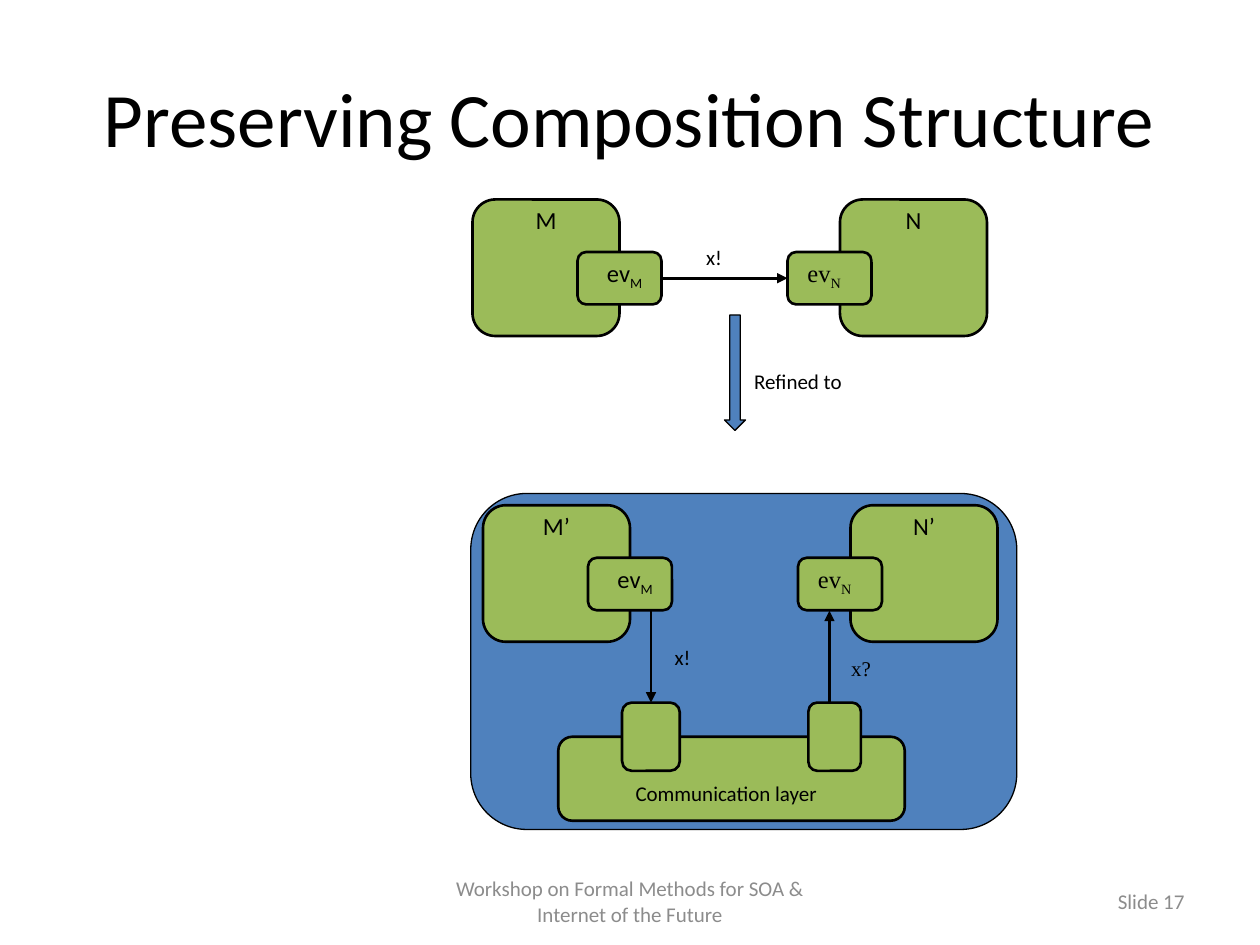
from lxml import etree
from pptx import Presentation
from pptx.dml.color import RGBColor
from pptx.enum.shapes import MSO_CONNECTOR, MSO_SHAPE
from pptx.enum.text import MSO_ANCHOR, PP_ALIGN
from pptx.oxml.ns import qn
from pptx.util import Pt

BLACK = RGBColor(0x00, 0x00, 0x00)
GREY = RGBColor(0x8C, 0x8C, 0x8C)
GREEN = RGBColor(0x9B, 0xBB, 0x59)
BLUE = RGBColor(0x4F, 0x81, 0xBD)
SANS = "Calibri"
SERIF = "Times New Roman"
ROUND = MSO_SHAPE.ROUNDED_RECTANGLE
DOWN_ARROW = MSO_SHAPE.DOWN_ARROW
STRAIGHT = MSO_CONNECTOR.STRAIGHT
TOP, MIDDLE = MSO_ANCHOR.TOP, MSO_ANCHOR.MIDDLE
CENTER, RIGHT = PP_ALIGN.CENTER, PP_ALIGN.RIGHT


def add_text(shapes, x, y, w, h, text, size=12, font=SANS, color=BLACK,
             align=CENTER, anchor=TOP, inset=(3, 1.5), subscript=None):
    tf = shapes.add_textbox(Pt(x), Pt(y), Pt(w), Pt(h)).text_frame
    tf.word_wrap = True
    tf.vertical_anchor = anchor
    tf.margin_left = tf.margin_right = Pt(inset[0])
    tf.margin_top = tf.margin_bottom = Pt(inset[1])
    p = tf.paragraphs[0]
    p.alignment = align
    p.font.size = Pt(size)
    p.font.name = font
    p.font.color.rgb = color
    p.add_run().text = text
    if subscript:
        r = p.add_run()
        r.text = subscript
        r.font._element.set("baseline", "-25000")


def add_block(shapes, x, y, w, h, fill=GREEN, weight=1.5, kind=ROUND):
    sp = shapes.add_shape(kind, Pt(x), Pt(y), Pt(w), Pt(h))
    sp.shadow.inherit = False
    sp.fill.solid()
    sp.fill.fore_color.rgb = fill
    sp.line.color.rgb = BLACK
    sp.line.width = Pt(weight)
    return sp


def add_arrow(shapes, x1, y1, x2, y2):
    cxn = shapes.add_connector(STRAIGHT, Pt(x1), Pt(y1), Pt(x2), Pt(y2))
    cxn.line.color.rgb = BLACK
    cxn.line.width = Pt(1.5)
    ln = cxn.line._get_or_add_ln()
    etree.SubElement(ln, qn("a:tailEnd"), type="triangle")
    etree.SubElement(cxn._element.spPr, qn("a:effectLst"))
    return cxn


def add_machines(shapes, x, y, left_name, right_name):
    for dx in (210, 0):
        add_block(shapes, x + dx, y, 84, 78)
    events = [add_block(shapes, x + dx, y + 30, 48, 30) for dx in (60, 180)]
    for dx, name in ((6, left_name), (216, right_name)):
        add_text(shapes, x + dx, y, 72, 23, name, 14, inset=(3, 3))
    for dx, name, font in ((72, "M", SANS), (186, "N", SERIF)):
        add_text(shapes, x + dx, y + 33, 30, 20, "ev", 14, font,
                 anchor=MIDDLE, subscript=name)
    return events


def add_abstract_model(s, x, y):
    shapes = s.shapes.add_group_shape().shapes
    sender, receiver = add_machines(shapes, x, y, "M", "N")
    cxn = add_arrow(shapes, x + 108, y + 45, x + 180, y + 45)
    cxn.begin_connect(sender, 3)
    cxn.end_connect(receiver, 1)
    add_text(shapes, x + 126, y + 24, 24, 17, "x!")


def add_refinement(s, x, y):
    add_block(s.shapes, x, y, 12, 66, BLUE, 0.75, DOWN_ARROW)
    add_text(s.shapes, x + 12, y + 30, 60, 17, "Refined to", inset=(3, 0.75))


def add_refined_model(s, x, y):
    shapes = s.shapes.add_group_shape().shapes
    add_block(shapes, x, y, 312, 192, BLUE, 0.75)
    add_machines(shapes, x + 7, y + 6.75, "M’", "N’")
    add_block(shapes, x + 50, y + 139, 198, 48)
    port = add_block(shapes, x + 86.5, y + 119.5, 33, 39)
    add_block(shapes, x + 193, y + 119.5, 30, 39)
    cxn = add_arrow(shapes, x + 103, y + 67, x + 103, y + 119.5)
    cxn.end_connect(port, 0)
    add_arrow(shapes, x + 205, y + 119.5, x + 205, y + 67)
    add_text(shapes, x + 109, y + 85, 24, 17, "x!")
    add_text(shapes, x + 211, y + 91, 24, 17, "x?", font=SERIF)
    add_text(shapes, x + 77, y + 160.5, 138, 22, "Communication layer",
             inset=(7.2, 3.6))


def add_footer(s, x, y):
    style = dict(color=GREY, anchor=MIDDLE, inset=(7.2, 3.6))
    add_text(s.shapes, x, y, 228, 29,
             "Workshop on Formal Methods for SOA & Internet of the Future",
             **style)
    add_text(s.shapes, x + 270, y, 168, 29, "Slide 17", align=RIGHT, **style)


def main():
    prs = Presentation()
    prs.slide_width, prs.slide_height = Pt(720), Pt(540)
    s = prs.slides.add_slide(prs.slide_layouts[6])
    add_text(s.shapes, 36, 21.6, 648, 90, "Preserving Composition Structure",
             44, anchor=MIDDLE, inset=(7.2, 3.6))
    add_footer(s, 246, 500.4)
    add_abstract_model(s, 270, 114)
    add_refined_model(s, 269, 282)
    add_refinement(s, 414, 180)
    prs.save("out.pptx")


if __name__ == "__main__":
    main()
